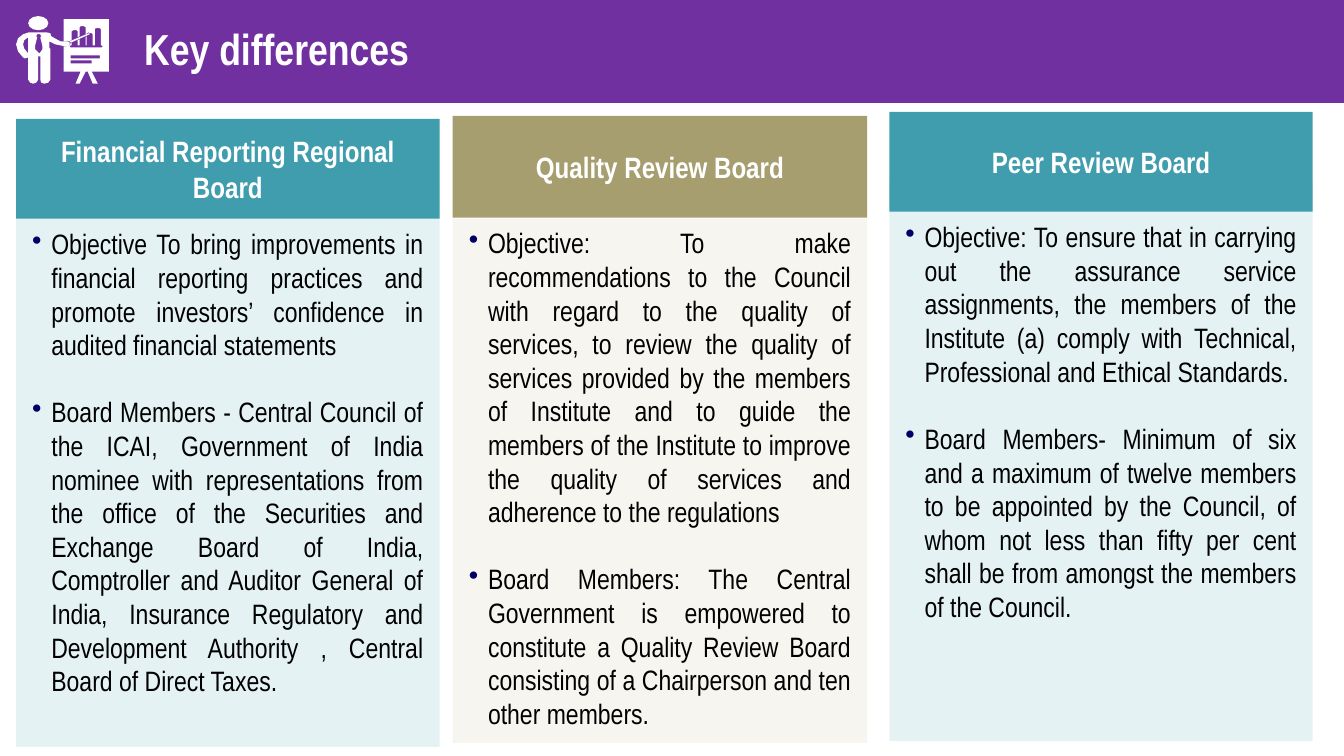
"""Build a slide comparing three review boards in parallel columns."""
from lxml.etree import SubElement
from pptx import Presentation
from pptx.dml.color import RGBColor as RGB
from pptx.enum.shapes import MSO_SHAPE as SHAPE
from pptx.enum.text import MSO_ANCHOR as ANCHOR, MSO_AUTO_SIZE as FIT, PP_ALIGN as ALIGN
from pptx.oxml.ns import qn
from pptx.util import Inches, Pt

FONT = "Arial Narrow"
WHITE, BLACK, NAVY = RGB(255, 255, 255), RGB(0, 0, 0), RGB(0, 0, 0x66)
PURPLE = RGB(0x70, 0x30, 0xA0)
TEAL, PALE_TEAL = RGB(0x40, 0x9D, 0xAD), RGB(0xE5, 0xF2, 0xF4)
OLIVE, PALE_OLIVE = RGB(0xA7, 0x9E, 0x70), RGB(0xF6, 0xF5, 0xF0)

TITLE = "Key differences"
BOARDS = [
    dict(name="Financial Reporting Regional Board", colors=(TEAL, PALE_TEAL),
         left=0.16, width=4.2, head=(1.18, 0.99), body=(1.84, 5.57), points=[
             "Objective To bring improvements in financial reporting practices and "
             "promote investors’ confidence in audited financial statements",
             "Board Members - Central Council of the ICAI, Government of India nominee "
             "with representations from the office of the Securities and Exchange Board "
             "of India, Comptroller and Auditor General of India, Insurance Regulatory "
             "and Development Authority , Central Board of Direct Taxes."]),
    dict(name="Quality Review Board", colors=(OLIVE, PALE_OLIVE),
         left=4.49, width=4.11, head=(1.15, 1.01), body=(2.17, 5.2), points=[
             "Objective: To make recommendations to the Council with regard to the "
             "quality of services, to review the quality of services provided by the "
             "members of Institute and to guide the members of the Institute to improve "
             "the quality of services and adherence to the regulations",
             "Board Members: The Central Government is empowered to constitute a Quality "
             "Review Board consisting of a Chairperson and ten other members."]),
    dict(name="Peer Review Board", colors=(TEAL, PALE_TEAL),
         left=8.82, width=4.2, head=(1.11, 0.99), body=(1.78, 5.57), points=[
             "Objective: To ensure that in carrying out the assurance service "
             "assignments, the members of the Institute (a) comply with Technical, "
             "Professional and Ethical Standards.",
             "Board Members- Minimum of six and a maximum of twelve members to be "
             "appointed by the Council, of whom not less than fifty per cent shall be "
             "from amongst the members of the Council."]),
]

HUNDREDTH = 9144
HEAD = (0.28, 0.16, 0.2, 0.14)
EASEL = [
    [(63, 41), (63, 19), (108, 19), (108, 71), (91, 71), (97, 83), (92, 83), (87, 71),
     (85, 71), (79, 83), (75, 83), (80, 71), (63, 71), (63, 46), (66, 46), (69, 45),
     (70, 43), (71, 42), (71, 45), (70, 45), (69, 46), (70, 47), (101, 47), (102, 46),
     (101, 45), (100, 45), (100, 29), (99, 28), (95, 28), (94, 29), (94, 45), (92, 45),
     (92, 34), (91, 33), (89, 33), (88, 32), (85, 34), (85, 27), (83, 26), (80, 26),
     (79, 27), (79, 36), (77, 37), (77, 31), (76, 30), (73, 30), (71, 31), (71, 40),
     (68, 41), (66, 40), (66, 41)],
    [(70, 63), (70, 60), (91, 60), (91, 63)],
    [(99, 58), (70, 58), (70, 55), (99, 55)],
]
SPEAKER = [
    [(50, 79), (50, 48), (49, 48), (49, 41), (55, 44), (60, 45), (64, 46), (66, 46),
     (69, 45), (69, 42), (67, 41), (60, 41), (58, 40), (51, 36), (50, 33), (46, 32),
     (29, 32), (23, 34), (18, 38), (16, 44), (18, 51), (23, 57), (25, 58), (28, 57),
     (28, 79), (30, 82), (33, 83), (36, 82), (38, 79), (38, 56), (40, 56), (40, 79),
     (41, 82), (44, 83), (48, 82)],
    [(23, 44), (24, 40), (28, 37), (28, 53), (24, 48)],
    [(39, 53), (35, 49), (35, 45), (37, 37), (36, 36), (37, 34), (40, 34), (41, 36),
     (40, 37), (42, 45), (42, 49), (40, 52)],
]
POINTER = [[(70, 42), (71, 42), (89, 34), (89, 33), (88, 33), (69, 41)]]
BARS = [[[(85, 45), (86, 45), (86, 36), (85, 37)]],
        [[(77, 45), (79, 45), (79, 39), (77, 40)]]]


def paint(sp, fill):
    """Give a shape a plain fill without line or shadow."""
    sp.fill.solid()
    sp.fill.fore_color.rgb = fill
    sp.line.fill.background()
    sp.shadow.inherit = False


def write(sp, texts, size=20, color=WHITE, bold=False, align=ALIGN.CENTER,
          anchor=ANCHOR.MIDDLE, insets=(0.12, 0.08, 0.12, 0.08), bullet=None, gap=0):
    """Fill a shape with formatted paragraphs."""
    tf = sp.text_frame
    tf.word_wrap, tf.auto_size, tf.vertical_anchor = True, FIT.NONE, anchor
    tf.margin_left, tf.margin_top, tf.margin_right, tf.margin_bottom = map(Inches, insets)
    for i, text in enumerate(texts):
        p = tf.add_paragraph() if i else tf.paragraphs[0]
        p.alignment = align
        p.space_before = Pt(gap if i else 0)
        r = p.add_run()
        r.text = text
        r.font.name, r.font.size, r.font.bold = FONT, Pt(size), bold
        r.font.color.rgb = color
        if bullet:
            pPr = p._p.get_or_add_pPr()
            pPr.set("marL", str(Inches(0.19)))
            pPr.set("indent", str(-Inches(0.19)))
            SubElement(SubElement(pPr, qn("a:buClr")), qn("a:srgbClr"), val=str(NAVY))
            SubElement(pPr, qn("a:buChar"), char=bullet)


def add_box(shapes, kind, at, fill):
    """Add a painted preset shape."""
    sp = shapes.add_shape(kind, *map(Inches, at))
    paint(sp, fill)
    return sp


def add_outline(shapes, contours):
    """Add a white outline whose later contours are holes."""
    first, *holes = contours
    fb = shapes.build_freeform(*first[0], scale=HUNDREDTH)
    fb.add_line_segments(first[1:], close=True)
    for hole in holes:
        fb.move_to(*hole[0])
        fb.add_line_segments(hole[1:], close=True)
    paint(fb.convert_to_shape(), WHITE)


def add_board(shapes, board):
    """Add one column: its body panel and its heading."""
    left, width = board["left"], board["width"]
    head_top, head_height = board["head"]
    body_top, body_height = board["body"]
    head_fill, body_fill = board["colors"]
    text_inset = head_top + head_height + 0.08 - body_top
    body = add_box(shapes, SHAPE.RECTANGLE, (left, body_top, width, body_height), body_fill)
    write(body, board["points"], color=BLACK, align=ALIGN.JUSTIFY, anchor=ANCHOR.TOP,
          insets=(0.16, text_inset, 0.16, 0.16), bullet="•", gap=24)
    head = add_box(shapes, SHAPE.RECTANGLE, (left, head_top, width, head_height), head_fill)
    write(head, [board["name"]], size=21, bold=True)


def main():
    """Lay out the slide and save it."""
    prs = Presentation()
    prs.slide_width, prs.slide_height = Inches(13.33), Inches(7.5)
    s = prs.slides.add_slide(prs.slide_layouts[5])
    title = s.shapes.title
    title.left, title.top, title.width, title.height = map(Inches, (-0.04, -0.08, 13.37, 1.11))
    title.fill.solid()
    title.fill.fore_color.rgb = PURPLE
    title.line.color.rgb, title.line.width = WHITE, Pt(0.5)
    write(title, [TITLE], size=31, bold=True, align=ALIGN.LEFT, insets=(1.47, 0.05, 0.1, 0.05))

    icon = s.shapes.add_group_shape().shapes
    for contours in [*BARS, EASEL, SPEAKER, POINTER]:
        add_outline(icon, contours)
    add_box(icon, SHAPE.OVAL, HEAD, WHITE)

    for board in BOARDS:
        add_board(s.shapes, board)
    prs.save("out.pptx")


if __name__ == "__main__":
    main()
